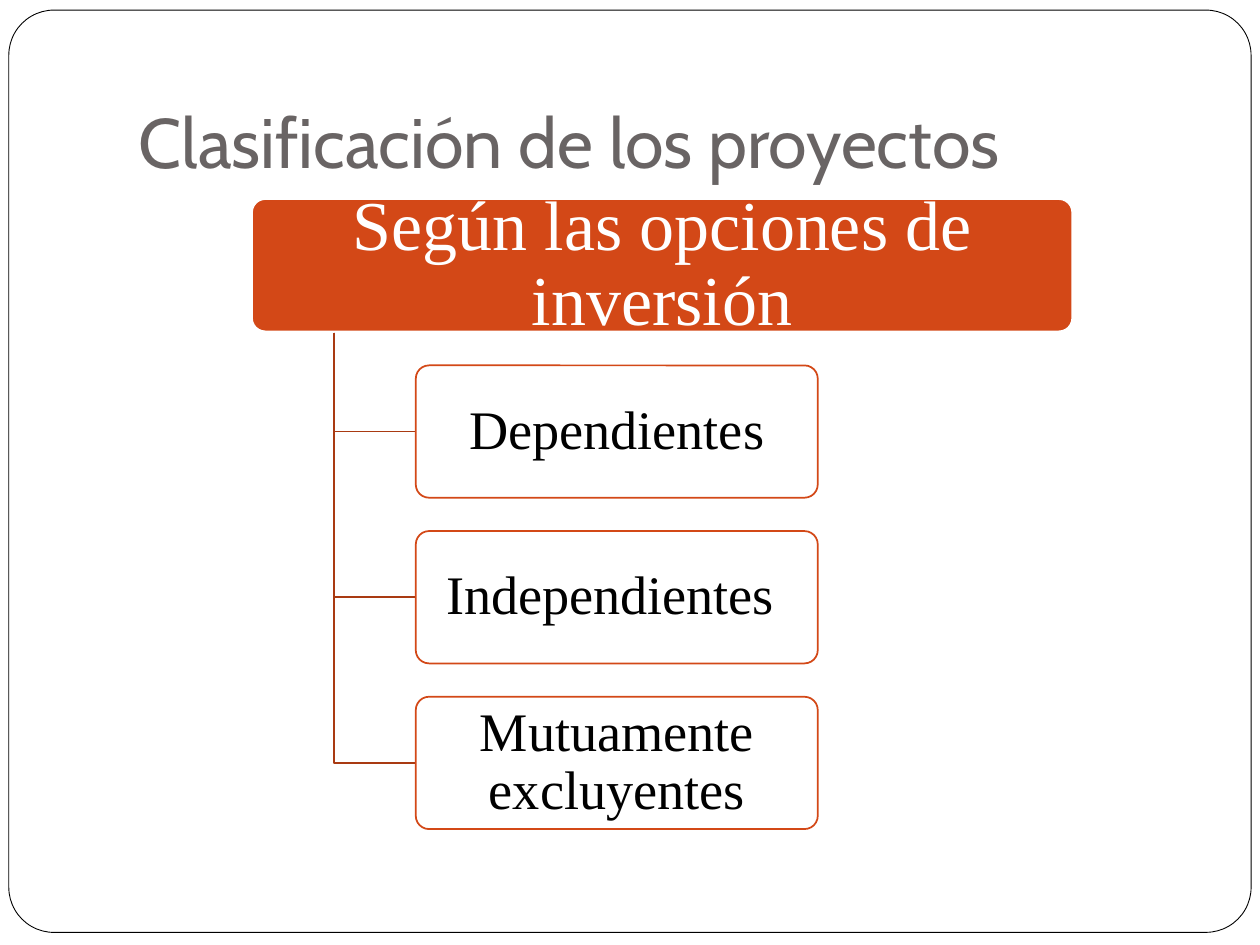
from dataclasses import dataclass

from pptx import Presentation
from pptx.dml.color import RGBColor
from pptx.enum import shapes, text
from pptx.util import Inches, Pt


@dataclass(frozen=True)
class Theme:
    white = RGBColor(0xFF, 0xFF, 0xFF)
    black = RGBColor(0x00, 0x00, 0x00)
    grey = RGBColor(0x69, 0x64, 0x64)
    orange = RGBColor(0xD3, 0x48, 0x17)
    rust = RGBColor(0xA9, 0x3A, 0x12)
    title_font = "Cabin"
    body_font = "Times New Roman"
    title_size = Pt(40)
    header_size = Pt(40)
    option_size = Pt(31)


theme = Theme()


def add_round_rect(left, top, width, height, radius, fill, line, weight):
    sp = s.shapes.add_shape(shapes.MSO_SHAPE.ROUNDED_RECTANGLE, Inches(left),
                            Inches(top), Inches(width), Inches(height))
    sp.shadow.inherit = False
    sp.adjustments[0] = radius
    sp.fill.solid()
    sp.fill.fore_color.rgb = fill
    sp.line.color.rgb = line
    sp.line.width = Pt(weight)
    return sp


def write_centred(sp, wording, size, color, inset_x, inset_y):
    tf = sp.text_frame
    tf.word_wrap = True
    tf.vertical_anchor = text.MSO_ANCHOR.MIDDLE
    tf.margin_left = tf.margin_right = Inches(inset_x)
    tf.margin_top = tf.margin_bottom = Inches(inset_y)
    p = tf.paragraphs[0]
    p.text = wording
    p.alignment = text.PP_ALIGN.CENTER
    p.line_spacing = 0.9
    p.font.name = theme.body_font
    p.font.size = size
    p.font.color.rgb = color


prs = Presentation()
prs.slide_width, prs.slide_height = Inches(10), Inches(7.5)
s = prs.slides.add_slide(prs.slide_layouts[5])

# Frame, sent behind the title
frame = add_round_rect(0.07, 0.08, 9.86, 7.32, 0.049, theme.white, theme.black, 0.5)
title = s.shapes.title
title._element.addprevious(frame._element)

# Title
title.left, title.top = Inches(1), Inches(0.3)
title.width, title.height = Inches(8.5), Inches(1.25)
tf = title.text_frame
tf.word_wrap = True
tf.auto_size = text.MSO_AUTO_SIZE.NONE
tf.vertical_anchor = text.MSO_ANCHOR.BOTTOM
tf.margin_left = tf.margin_right = tf.margin_bottom = Inches(0.1)
tf.margin_top = Inches(0.05)
p = tf.paragraphs[0]
p.text = "Clasificación de los proyectos"
p.alignment = text.PP_ALIGN.LEFT
p.font.name = theme.title_font
p.font.size = theme.title_size
p.font.color.rgb = theme.grey

# Header of the hierarchy
box_height = 1.05
header_left, header_top, header_width = 2, 1.58, 6.51
header = add_round_rect(header_left, header_top, header_width, box_height, 0.1,
                        theme.orange, theme.white, 1)
write_centred(header, "Según las opciones de inversión", theme.header_size,
              theme.white, 0.11, 0.09)

# Options, each joined to the header by an elbow
option_left, option_width = 3.3, 3.19
first_top, pitch = 2.9, 1.315
trunk_x, trunk_top = 2.65, 2.64
for i, wording in enumerate(["Dependientes", "Independientes ", "Mutuamente excluyentes"]):
    top = first_top + i * pitch
    middle = top + box_height / 2
    builder = s.shapes.build_freeform(Inches(trunk_x), Inches(trunk_top))
    builder.add_line_segments([(Inches(trunk_x), Inches(middle)),
                               (Inches(option_left), Inches(middle))], close=False)
    elbow = builder.convert_to_shape()
    elbow.shadow.inherit = False
    elbow.fill.background()
    elbow.line.color.rgb = theme.rust
    elbow.line.width = Pt(1)

    option = add_round_rect(option_left, top, option_width, box_height, 0.1,
                            theme.white, theme.orange, 1)
    write_centred(option, wording, theme.option_size, theme.black, 0.09, 0.07)

prs.save("out.pptx")
